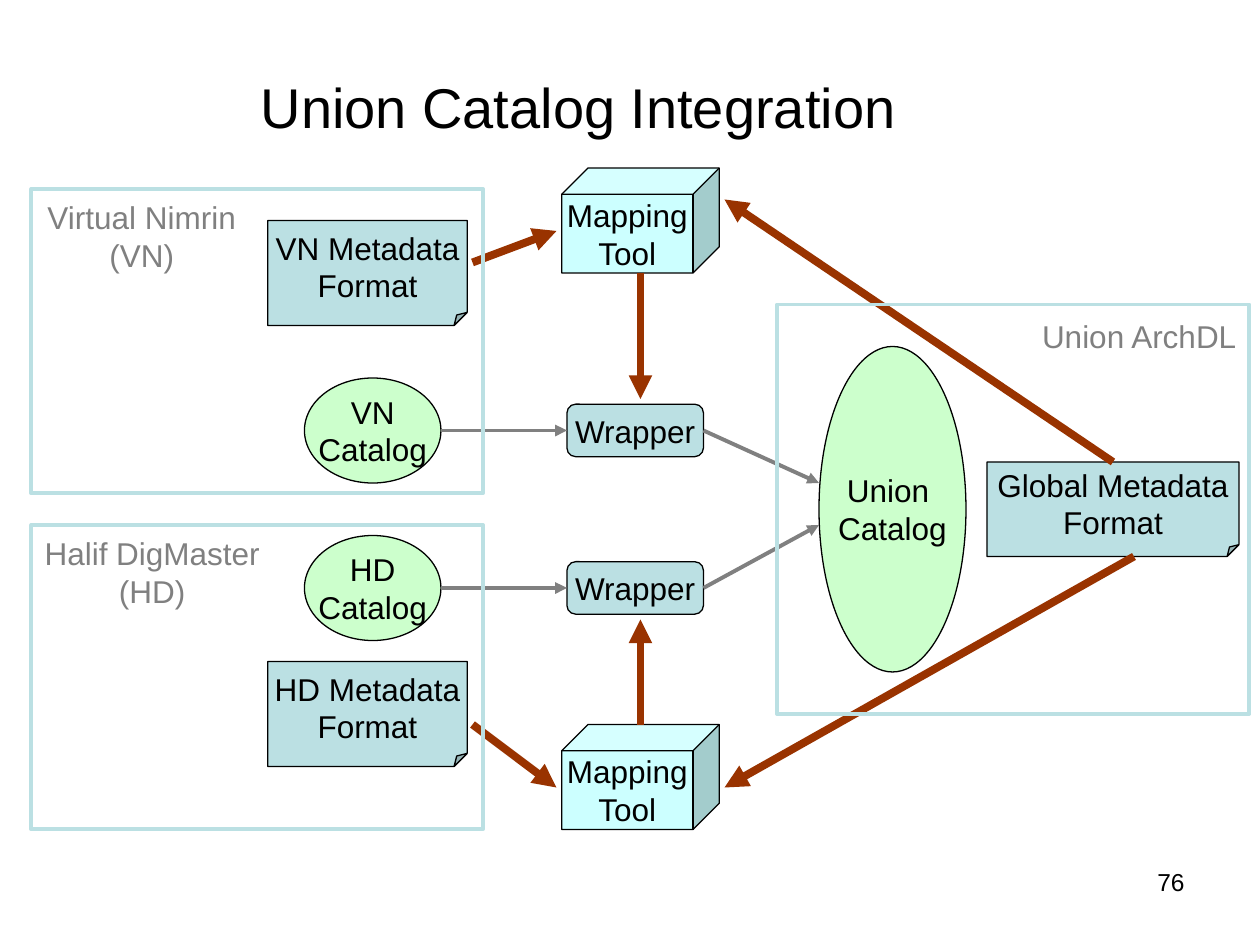
from lxml import etree
from pptx import Presentation
from pptx import util as u
from pptx.dml.color import RGBColor
from pptx.enum import shapes, text
from pptx.oxml.ns import qn

# Grid: 120 columns by 90 rows, so one cell is 1/12 inch.
COLUMNS, ROWS = 120, 90
CELL = u.Inches(10) / COLUMNS
FONT = "Arial"
BLACK, GREY, BROWN = "000000", "808080", "993300"
TEAL, GREEN, AQUA = "BBE0E3", "CCFFCC", "CCFFFF"

TITLE = ("Union Catalog Integration", (4, 6.8, 102.2, 7.1))
PAGE_NUMBER = ("76", (86, 82, 28, 6.2))

# kind: preset shape, fill, adjustment in thousandths of a percent
KINDS = {
    "format": (shapes.MSO_SHAPE.FOLDED_CORNER, TEAL, 12500),
    "catalog": (shapes.MSO_SHAPE.OVAL, GREEN, None),
    "tool": (shapes.MSO_SHAPE.CUBE, AQUA, 25000),
    "wrapper": (shapes.MSO_SHAPE.ROUNDED_RECTANGLE, TEAL, 16700),
}

# name: kind, lines, (column, row, columns wide, rows high)
NODES = {
    "vn format": ("format", ["VN Metadata", "Format"], (25.5, 21, 19, 10)),
    "hd format": ("format", ["HD Metadata", "Format"], (25.5, 63, 19, 10)),
    "global format": ("format", ["Global Metadata", "Format"], (94, 44, 24, 9)),
    "vn catalog": ("catalog", ["VN", "Catalog"], (29, 36, 13, 10)),
    "hd catalog": ("catalog", ["HD", "Catalog"], (29, 51, 13, 10)),
    "union catalog": ("catalog", ["Union ", "Catalog"], (78, 33, 14, 31)),
    "vn tool": ("tool", ["Mapping", "Tool"], (53.5, 16, 15, 10)),
    "hd tool": ("tool", ["Mapping", "Tool"], (53.5, 69, 15, 10)),
    "vn wrapper": ("wrapper", ["Wrapper"], (54, 38.5, 13, 5)),
    "hd wrapper": ("wrapper", ["Wrapper"], (54, 53.5, 13, 5)),
}

# start, end, joined start, joined end; a join is (node, side)
DATA_FLOWS = [
    ((42, 41), (54, 41), None, ("vn wrapper", 1)),
    ((42, 56), (54, 56), None, ("hd wrapper", 1)),
    ((67, 41), (78, 46), ("vn wrapper", 3), None),
    ((67, 56), (78, 50), ("hd wrapper", 3), None),
]
MAPPING_FLOWS = [
    ((45, 25), (53, 22), None, None),
    ((61, 26), (61, 38), None, None),
    ((106, 44), (69, 19), ("global format", 0), None),
    ((45, 69), (53, 75), None, None),
    ((61, 69), (61, 59), None, None),
    ((108, 53), (69, 75), None, None),
]

# frame, label lines, label place
SYSTEMS = [
    ((3, 18, 43, 29), ["Virtual Nimrin", "(VN)"], (4, 19, 19, 7)),
    ((3, 50, 43, 29), ["Halif DigMaster", "(HD)"], (5, 51, 19, 7)),
    ((74, 29, 45, 39), ["Union ArchDL"], (99, 30, 19, 4)),
]


def cells(values):
    return [round(value * CELL) for value in values]


def color(value):
    return RGBColor.from_string(value)


def write(shape, lines, size=18, ink=BLACK, align=text.PP_ALIGN.CENTER,
          anchor=text.MSO_ANCHOR.MIDDLE, wrap=False):
    frame = shape.text_frame
    frame.word_wrap = wrap
    frame.auto_size = text.MSO_AUTO_SIZE.NONE
    frame.vertical_anchor = anchor
    frame.text = "\n".join(lines)
    for para in frame.paragraphs:
        para.alignment = align
        for span in para.runs:
            span.font.name = FONT
            span.font.size = u.Pt(size)
            span.font.color.rgb = color(ink)


def add_box(slide, preset, place, line, width, fill=None):
    box = slide.shapes.add_shape(preset, *cells(place))
    box.shadow.inherit = False
    box.line.color.rgb = color(line)
    box.line.width = u.Pt(width)
    if fill:
        box.fill.solid()
        box.fill.fore_color.rgb = color(fill)
    else:
        box.fill.background()
    return box


def adjust(box, value):
    """Set the single guide of a preset, also where python-pptx lists none."""
    guides = box._element.spPr.find(qn("a:prstGeom")).find(qn("a:avLst"))
    for guide in list(guides):
        guides.remove(guide)
    etree.SubElement(guides, qn("a:gd"), name="adj", fmla=f"val {value}")


def add_node(slide, kind, lines, place):
    preset, fill, adjustment = KINDS[kind]
    box = add_box(slide, preset, place, BLACK, 0.75, fill)
    if adjustment is not None:
        adjust(box, adjustment)
    write(box, lines)
    return box


def add_arrow(slide, nodes, flow, ink, width):
    start, end, joined_start, joined_end = flow
    arrow = slide.shapes.add_connector(
        shapes.MSO_CONNECTOR.STRAIGHT, *cells(start + end))
    if joined_start:
        arrow.begin_connect(nodes[joined_start[0]], joined_start[1])
    if joined_end:
        arrow.end_connect(nodes[joined_end[0]], joined_end[1])
    arrow.line.color.rgb = color(ink)
    arrow.line.width = u.Pt(width)
    properties = arrow._element.spPr
    etree.SubElement(properties.find(qn("a:ln")), qn("a:tailEnd"), type="triangle")
    etree.SubElement(properties, qn("a:effectLst"))


def add_label(slide, lines, place, **style):
    write(slide.shapes.add_textbox(*cells(place)), lines, **style)


def main():
    deck = Presentation()
    deck.slide_width, deck.slide_height = cells((COLUMNS, ROWS))
    slide = deck.slides.add_slide(deck.slide_layouts[5])

    heading, place = TITLE
    title = slide.shapes.title
    title.left, title.top, title.width, title.height = cells(place)
    write(title, [heading], size=32, anchor=text.MSO_ANCHOR.BOTTOM, wrap=True)

    nodes = {name: add_node(slide, *node) for name, node in NODES.items()}
    for flow in DATA_FLOWS:
        add_arrow(slide, nodes, flow, GREY, 2.25)
    for flow in MAPPING_FLOWS:
        add_arrow(slide, nodes, flow, BROWN, 4.5)
    for frame, lines, place in SYSTEMS:
        add_box(slide, shapes.MSO_SHAPE.RECTANGLE, frame, TEAL, 2.25)
        add_label(slide, lines, place, ink=GREY)

    number, place = PAGE_NUMBER
    add_label(slide, [number], place, size=14, align=text.PP_ALIGN.RIGHT,
              anchor=text.MSO_ANCHOR.TOP, wrap=True)
    deck.save("out.pptx")


if __name__ == "__main__":
    main()
